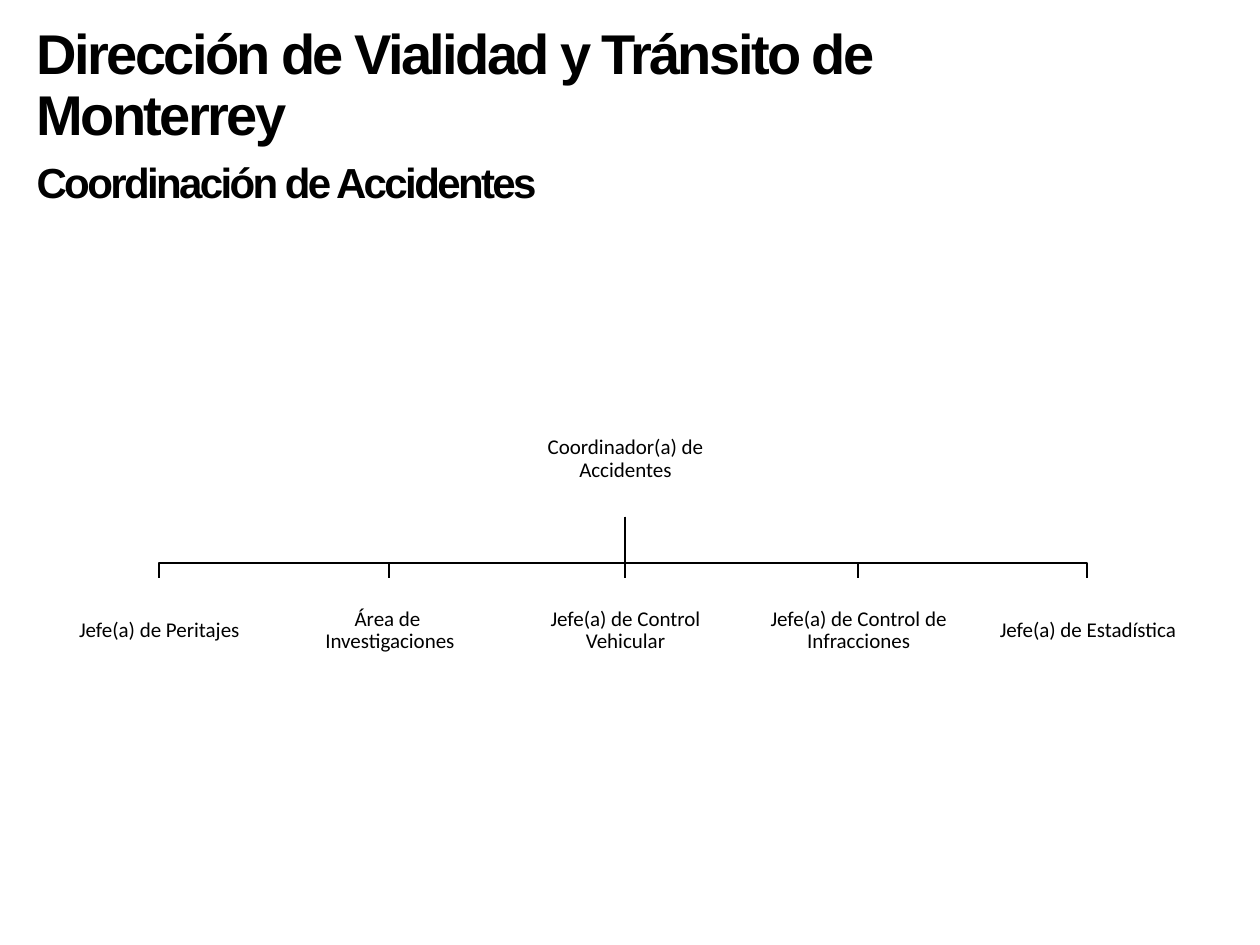
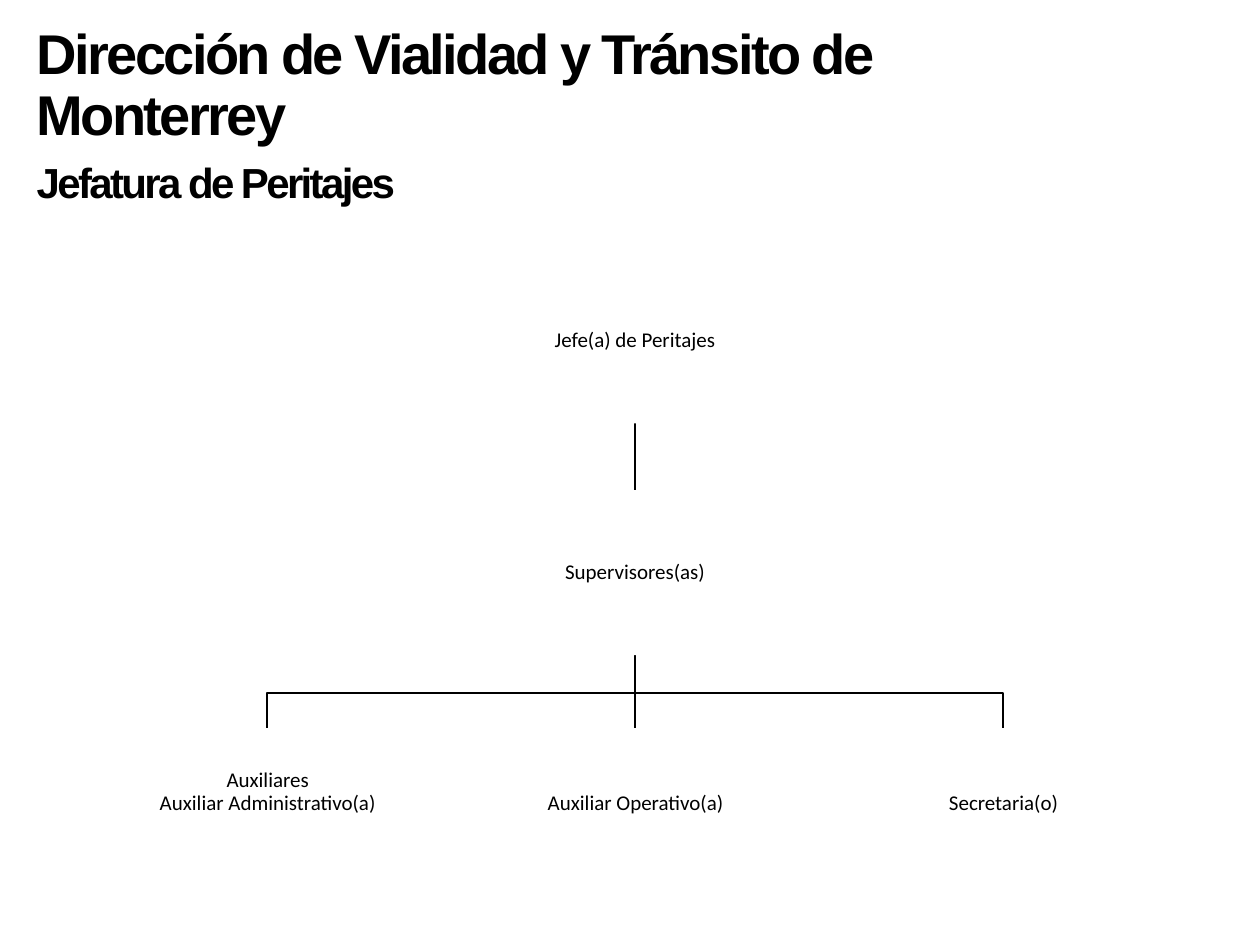
from dataclasses import dataclass

from lxml import etree
from pptx import Presentation
from pptx import util as u
from pptx.dml.color import RGBColor
from pptx.enum import shapes, text
from pptx.oxml.ns import qn

PX = 9144  # 100 px to the inch


@dataclass(frozen=True)
class Theme:
    ink: RGBColor = RGBColor(0, 0, 0)
    paper: RGBColor = RGBColor(255, 255, 255)
    title_font: str = "Arial"
    box_font: str = "Calibri"
    title_size: int = 32
    subtitle_size: int = 24
    box_size: int = 12
    line_width: int = 1
    line_spacing: float = 0.9
    tracking: str = "-150"


@dataclass(frozen=True)
class Box:
    """A post in the chart; each entry of paragraphs may hold line breaks."""
    x: int
    y: int
    w: int
    h: int
    paragraphs: tuple[str, ...]
    bottom_inset: int = 1

    @property
    def center(self) -> int:
        return self.x + self.w // 2

    @property
    def bottom(self) -> int:
        return self.y + self.h


@dataclass(frozen=True)
class OrgChart:
    """A chain of posts whose last one branches, along the height bus, to a team."""
    subtitle: str
    chain: tuple[Box, ...]
    bus: int
    team: tuple[Box, ...]


THEME = Theme()
OFFICE = "Dirección de Vialidad y Tránsito de Monterrey"

CHIEFS = (
    (46, "Jefe(a) de Peritajes"),
    (229, "Área de \nInvestigaciones"),
    (416, "Jefe(a) de Control Vehicular"),
    (601, "Jefe(a) de Control de Infracciones"),
    (783, "Jefe(a) de Estadística"),
)
ASSISTANTS = (
    (("Auxiliares", "Auxiliar Administrativo(a)"), 19),
    (("Auxiliar Operativo(a)",), 1),
    (("Secretaria(o)",), 1),
)

CHARTS = (
    OrgChart(
        "Coordinación de Accidentes",
        (Box(398, 319, 197, 91, ("Coordinador(a) de Accidentes",)),),
        447,
        tuple(Box(x, 459, 161, 83, (post,)) for x, post in CHIEFS),
    ),
    OrgChart(
        "Jefatura de Peritajes",
        (
            Box(358, 205, 292, 131, ("Jefe(a) de Peritajes",)),
            Box(382, 389, 244, 131, ("Supervisores(as)",)),
        ),
        550,
        tuple(Box(94 + 292 * i, 578, 237, 119, posts, inset)
              for i, (posts, inset) in enumerate(ASSISTANTS)),
    ),
)


def add_run(p, words: str, font: str, size: int, bold: bool = False):
    r = p.add_run()
    r.text = words
    r.font.name = font
    r.font.size = u.Pt(size)
    r.font.bold = bold
    r.font.color.rgb = THEME.ink
    return r


def add_title(s, subtitle: str) -> None:
    sp = s.shapes.title
    sp.left, sp.top, sp.width, sp.height = (n * PX for n in (19, 16, 746, 147))
    tf = sp.text_frame
    tf.word_wrap = True
    tf.auto_size = text.MSO_AUTO_SIZE.SHAPE_TO_FIT_TEXT
    tf.vertical_anchor = text.MSO_ANCHOR.TOP
    lines = ((tf.paragraphs[0], OFFICE, THEME.title_size),
             (tf.add_paragraph(), subtitle, THEME.subtitle_size))
    for p, words, size in lines:
        p.alignment = text.PP_ALIGN.LEFT
        r = add_run(p, words, THEME.title_font, size, bold=True)
        r.font._element.set("spc", THEME.tracking)
    lines[0][0].line_spacing = THEME.line_spacing
    lines[1][0].line_spacing = 1.0
    lines[1][0].space_before = u.Pt(5)


def add_box(s, box: Box) -> None:
    sp = s.shapes.add_shape(shapes.MSO_SHAPE.RECTANGLE,
                            box.x * PX, box.y * PX, box.w * PX, box.h * PX)
    sp.shadow.inherit = False
    sp.fill.solid()
    sp.fill.fore_color.rgb = THEME.paper
    sp.line.fill.background()
    tf = sp.text_frame
    tf.word_wrap = True
    tf.vertical_anchor = text.MSO_ANCHOR.MIDDLE
    tf.margin_left = tf.margin_right = tf.margin_top = PX
    tf.margin_bottom = box.bottom_inset * PX
    for i, words in enumerate(box.paragraphs):
        p = tf.add_paragraph() if i else tf.paragraphs[0]
        p.alignment = text.PP_ALIGN.CENTER
        p.line_spacing = THEME.line_spacing
        for j, line in enumerate(words.split("\n")):
            if j:
                p.add_line_break()
            add_run(p, line, THEME.box_font, THEME.box_size)


def add_link(s, parent: Box, child: Box, bus: int) -> None:
    """Join two posts by a straight line, or by an elbow that turns at bus."""
    x1, y1, x2, y2 = parent.center, parent.bottom, child.center, child.y
    if x1 == x2:
        sp = s.shapes.add_connector(shapes.MSO_CONNECTOR.STRAIGHT,
                                    x1 * PX, y1 * PX, x2 * PX, y2 * PX)
        etree.SubElement(sp._element.spPr, qn("a:effectLst"))
    else:
        elbow = s.shapes.build_freeform(x1, y1, scale=PX)
        elbow.add_line_segments([(x1, bus), (x2, bus), (x2, y2)], close=False)
        sp = elbow.convert_to_shape()
        sp.shadow.inherit = False
        sp.fill.background()
    sp.line.color.rgb = THEME.ink
    sp.line.width = u.Pt(THEME.line_width)


def add_org_chart(prs, chart: OrgChart) -> None:
    s = prs.slides.add_slide(prs.slide_layouts[5])
    s.background.fill.solid()
    s.background.fill.fore_color.rgb = THEME.paper
    add_title(s, chart.subtitle)
    links = [*zip(chart.chain, chart.chain[1:]),
             *((chart.chain[-1], member) for member in chart.team)]
    for parent, child in links:
        add_link(s, parent, child, chart.bus)
    for box in chart.chain + chart.team:
        add_box(s, box)


def main() -> None:
    prs = Presentation()
    prs.slide_width, prs.slide_height = 1000 * PX, 750 * PX
    for chart in CHARTS:
        add_org_chart(prs, chart)
    prs.save("out.pptx")


if __name__ == "__main__":
    main()
